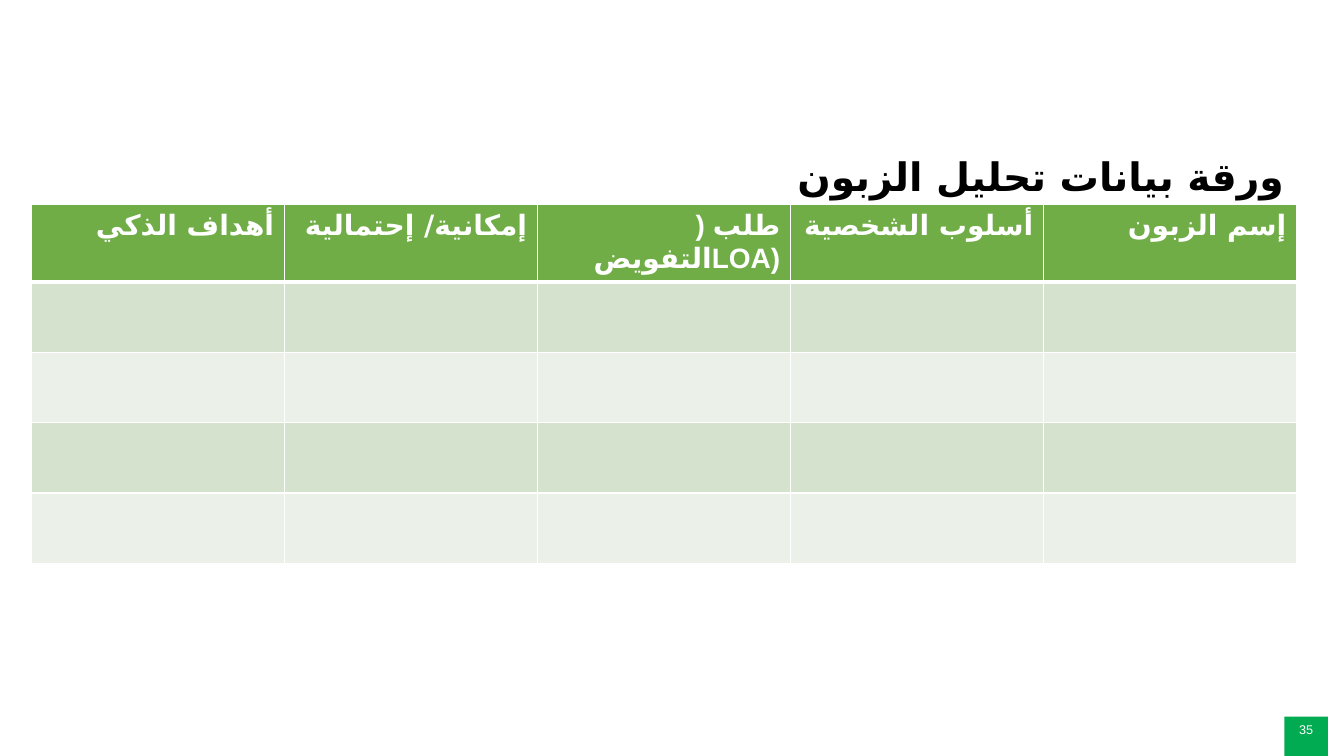
from lxml import etree
from pptx import Presentation, util as u
from pptx.dml import color
from pptx.enum import lang, shapes, text
from pptx.oxml import ns

WIDE, HIGH = 13.33, 7.5
HEADS = ["أهداف الذكي", "إمكانية/ إحتمالية", ") طلب التفويضLOA)",
         "أسلوب الشخصية", "إسم الزبون"]
GREEN, BANDS = "70AD47", ["EBF1E8", "D4E2CE"]
WHITE = "FFFFFF"
RIGHT, CENTER = text.PP_ALIGN.RIGHT, text.PP_ALIGN.CENTER
ARABIC = {"bold": True, "language_id": lang.MSO_LANGUAGE_ID.ARABIC}


def paint(fill, code):
    fill.solid()
    fill.fore_color.rgb = color.RGBColor.from_string(code)


def write(frame, words, align, code, **form):
    """Put one formatted line of text in a frame."""
    frame.word_wrap = True
    para = frame.paragraphs[0]
    para.alignment = align
    run = para.add_run()
    run.text = words
    paint(run.font.fill, code)
    for key, value in {"name": "Arial", **form}.items():
        setattr(run.font, key, value)
    # Wide Arabic letters come from the complex-script font
    etree.SubElement(run.font._element, ns.qn("a:cs"), typeface="DejaVu Sans")
    return para


def edge(cell, side, width):
    """Draw one white cell border."""
    props = cell._tc.get_or_add_tcPr()
    line = etree.SubElement(props, ns.qn("a:ln" + side), w=str(u.Pt(width)))
    fill = etree.SubElement(line, ns.qn("a:solidFill"))
    etree.SubElement(fill, ns.qn("a:srgbClr"), val=WHITE)


def title(slide, box):
    frame = slide.shapes.add_textbox(*map(u.Inches, box)).text_frame
    frame.vertical_anchor = text.MSO_ANCHOR.BOTTOM
    para = write(frame, "ورقة بيانات تحليل الزبون", RIGHT, "000000",
                 size=u.Pt(28), **ARABIC)
    para.line_spacing = 0.9


def sheet(slide, box, head, rows):
    """Header row of height head over equal, banded empty rows."""
    left, top, width, height = map(u.Inches, box)
    table = slide.shapes.add_table(rows + 1, len(HEADS), left, top,
                                   width, height).table
    for col in table.columns:
        col.width = width // len(HEADS)
    for i, row in enumerate(table.rows):
        row.height = u.Inches(head if i == 0 else (box[3] - head) / rows)
        for j, cell in enumerate(row.cells):
            for side in "LRTB":
                thick = (i, side) in [(0, "B"), (1, "T")]
                edge(cell, side, 3 if thick else 1)
            paint(cell.fill, BANDS[i % 2] if i else GREEN)
            if i == 0:
                write(cell.text_frame, HEADS[j], RIGHT, WHITE,
                      size=u.Pt(20), **ARABIC)


def number(slide, box):
    tag = slide.shapes.add_shape(shapes.MSO_SHAPE.RECTANGLE,
                                 *map(u.Inches, box))
    tag.shadow.inherit = False
    paint(tag.fill, "00AB51")
    tag.line.fill.background()
    tag.text_frame.vertical_anchor = text.MSO_ANCHOR.TOP
    write(tag.text_frame, "35", CENTER, WHITE, size=u.Pt(9))


def main():
    deck = Presentation()
    deck.slide_width, deck.slide_height = u.Inches(WIDE), u.Inches(HIGH)
    slide = deck.slides.add_slide(deck.slide_layouts[6])
    sheet(slide, (0.31, 2.03, 12.55, 3.56), head=0.77, rows=4)
    title(slide, (0.49, 1.4, 12.34, 0.63))
    number(slide, (12.74, HIGH - 0.39, 0.43, 0.39))
    deck.save("out.pptx")


if __name__ == "__main__":
    main()
